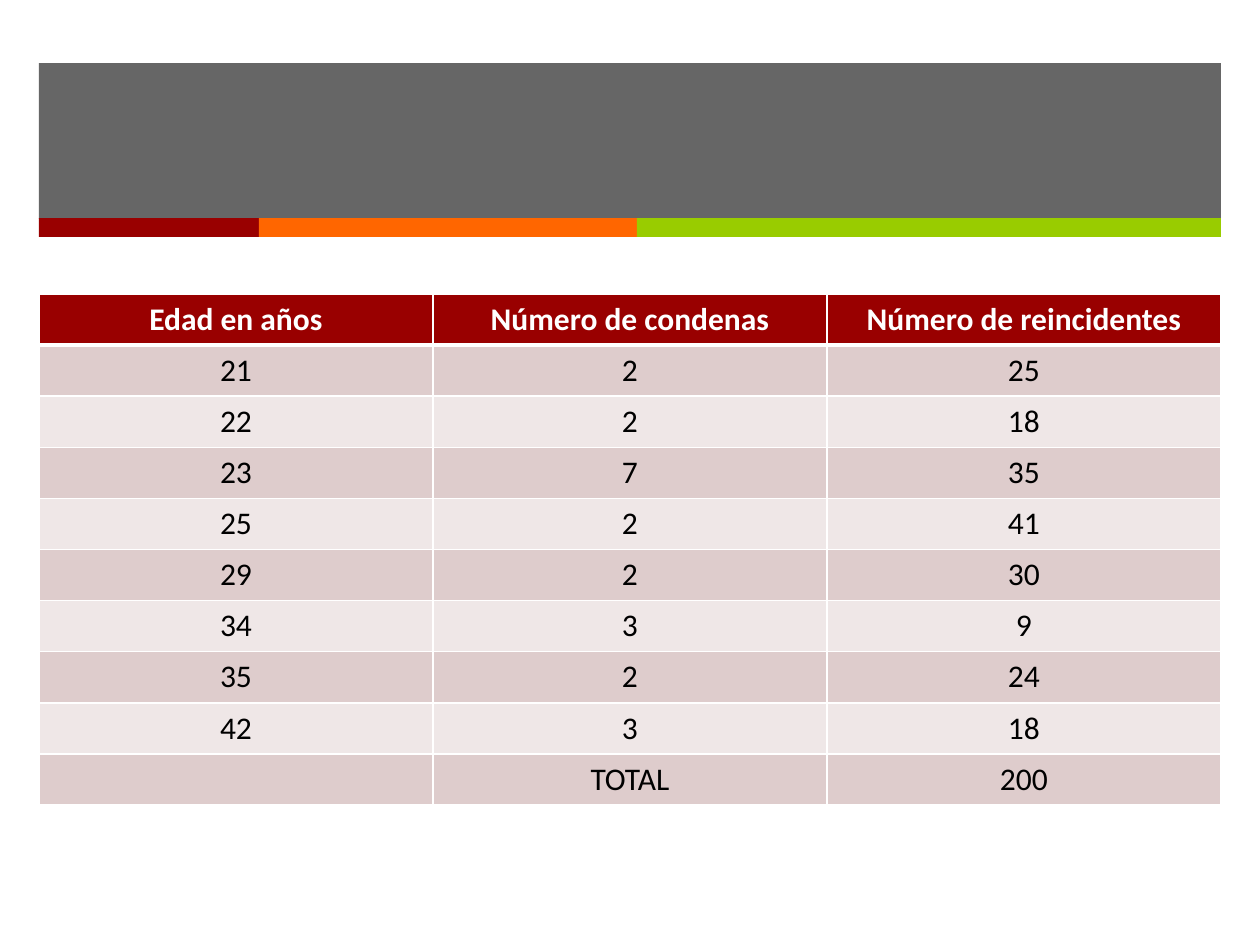
from dataclasses import dataclass

from lxml.etree import SubElement
from pptx import Presentation
from pptx.dml.color import RGBColor
from pptx.enum.shapes import MSO_SHAPE
from pptx.enum.text import PP_ALIGN
from pptx.oxml.ns import qn
from pptx.util import Emu, Pt


@dataclass(frozen=True)
class Theme:
    banner: str = "262626"
    banner_alpha: int = 70000
    red: str = "990000"
    orange: str = "FF6600"
    green: str = "99CC00"
    white: str = "FFFFFF"
    black: str = "000000"
    bands: tuple = ("EFE7E7", "DECCCC")
    font: str = "Calibri"
    size: int = 18
    border: int = 1
    header_border: int = 3


theme = Theme()
PX = 914400 / 126
LEFT, WIDTH = 39, 1182
STRIP_TOP, STRIP_HEIGHT = 218, 19
TABLE_TOP, ROW_HEIGHT = 294, 51


def add_bar(slide, color, *box):
    shape = slide.shapes.add_shape(MSO_SHAPE.RECTANGLE, *(Emu(round(v * PX)) for v in box))
    shape.shadow.inherit = False
    shape.fill.solid()
    shape.fill.fore_color.rgb = RGBColor.from_string(color)
    shape.line.fill.background()
    return shape


def add_border(cell, side, points):
    line = SubElement(cell._tc.get_or_add_tcPr(), qn(f"a:ln{side}"), w=str(Pt(points)))
    fill = SubElement(line, qn("a:solidFill"))
    SubElement(fill, qn("a:srgbClr"), val=theme.white)


presentation = Presentation()
presentation.slide_width = Emu(round(1260 * PX))
presentation.slide_height = Emu(round(945 * PX))
slide = presentation.slides.add_slide(presentation.slide_layouts[6])

banner = add_bar(slide, theme.banner, LEFT, 63, WIDTH, 156)
banner_color = banner._element.spPr.find(qn("a:solidFill")).find(qn("a:srgbClr"))
SubElement(banner_color, qn("a:alpha"), val=str(theme.banner_alpha))

strip_left = LEFT
for color, width in ((theme.red, 220), (theme.orange, 378), (theme.green, 584)):
    add_bar(slide, color, strip_left, STRIP_TOP, width, STRIP_HEIGHT)
    strip_left += width

rows = [
    ("Edad en años", "Número de condenas", "Número de reincidentes"),
    (21, 2, 25),
    (22, 2, 18),
    (23, 7, 35),
    (25, 2, 41),
    (29, 2, 30),
    (34, 3, 9),
    (35, 2, 24),
    (42, 3, 18),
    ("", "TOTAL", 200),
]
table_box = (LEFT, TABLE_TOP, WIDTH, ROW_HEIGHT * len(rows))
table = slide.shapes.add_table(
    len(rows), len(rows[0]), *(Emu(round(v * PX)) for v in table_box)
).table

for row_index, values in enumerate(rows):
    header = row_index == 0
    fill_color = theme.red if header else theme.bands[row_index % 2]
    text_color = theme.white if header else theme.black
    font_format = {"name": theme.font, "size": Pt(theme.size), "bold": header}
    for column_index, value in enumerate(values):
        cell = table.cell(row_index, column_index)
        for side in "LRTB":
            thick = (side == "B" and header) or (side == "T" and row_index == 1)
            add_border(cell, side, theme.header_border if thick else theme.border)
        cell.fill.solid()
        cell.fill.fore_color.rgb = RGBColor.from_string(fill_color)
        cell.text = str(value)
        paragraph = cell.text_frame.paragraphs[0]
        paragraph.alignment = PP_ALIGN.CENTER
        for font in (paragraph.font, *(run.font for run in paragraph.runs)):
            for name, setting in font_format.items():
                setattr(font, name, setting)
            font.color.rgb = RGBColor.from_string(text_color)

presentation.save("out.pptx")
